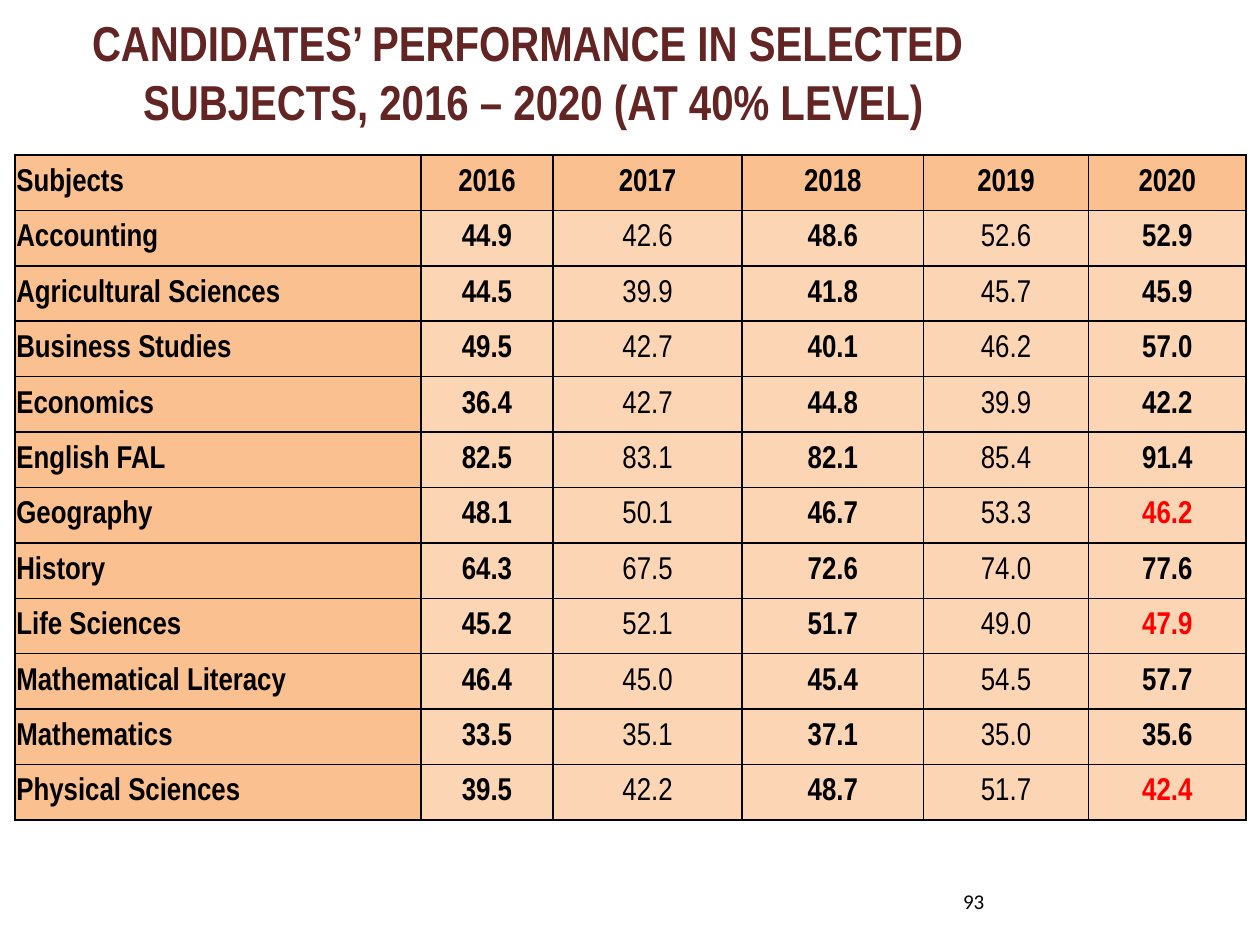
from dataclasses import dataclass

from lxml import etree
from pptx import Presentation
from pptx import util as u
from pptx.dml.color import RGBColor
from pptx.enum import text
from pptx.oxml import ns


@dataclass(frozen=True)
class Theme:
    title: str = "632523"
    body: str = "000000"
    decline: str = "FF0000"
    label_fill: str = "FAC090"
    value_fill: str = "FCD5B5"
    border: str = "000000"
    heading_font: str = "Arial Narrow"
    number_font: str = "Calibri"
    title_size: int = 28
    table_size: int = 18
    number_size: int = 12


THEME = Theme()
CENTER, LEFT, RIGHT = (text.PP_ALIGN.CENTER, text.PP_ALIGN.LEFT,
                       text.PP_ALIGN.RIGHT)

TITLE = ("CANDIDATES’ PERFORMANCE IN SELECTED ",
         "SUBJECTS, 2016 – 2020 (AT 40% LEVEL)")
YEARS = range(2016, 2021)
PASS_RATES = {
    "Accounting": (44.9, 42.6, 48.6, 52.6, 52.9),
    "Agricultural Sciences": (44.5, 39.9, 41.8, 45.7, 45.9),
    "Business Studies": (49.5, 42.7, 40.1, 46.2, 57.0),
    "Economics": (36.4, 42.7, 44.8, 39.9, 42.2),
    "English FAL": (82.5, 83.1, 82.1, 85.4, 91.4),
    "Geography": (48.1, 50.1, 46.7, 53.3, 46.2),
    "History": (64.3, 67.5, 72.6, 74.0, 77.6),
    "Life Sciences": (45.2, 52.1, 51.7, 49.0, 47.9),
    "Mathematical Literacy": (46.4, 45.0, 45.4, 54.5, 57.7),
    "Mathematics": (33.5, 35.1, 37.1, 35.0, 35.6),
    "Physical Sciences": (39.5, 42.2, 48.7, 51.7, 42.4),
}
COLUMN_WIDTHS = (3.22, 1.05, 1.5, 1.44, 1.31, 1.25)


def write(p, *lines, size, font=THEME.heading_font, color=THEME.body,
          bold=False, align=LEFT):
    """Fill a paragraph with lines that share one format."""
    p.alignment = align
    for i, line in enumerate(lines):
        if i:
            p.add_line_break()
        r = p.add_run()
        r.text = line
        r.font.size = u.Pt(size)
        r.font.name = font
        r.font.bold = bold
        r.font.color.rgb = RGBColor.from_string(color)


def add_text(s, box, *lines, **fmt):
    tf = s.shapes.add_textbox(*map(u.Inches, box)).text_frame
    tf.word_wrap = True
    tf.vertical_anchor = text.MSO_ANCHOR.MIDDLE
    write(tf.paragraphs[0], *lines, **fmt)


def add_title(s, box):
    add_text(s, box, *TITLE, size=THEME.title_size, color=THEME.title,
             bold=True, align=CENTER)


def add_page_number(s, box, number):
    add_text(s, box, str(number), size=THEME.number_size,
             font=THEME.number_font, align=RIGHT)


def style_cell(cell, fill):
    """Set insets, border and fill; borders must precede the fill in XML."""
    cell.margin_left = cell.margin_right = cell.margin_top = u.Inches(0.01)
    cell.margin_bottom = 0
    cell.vertical_anchor = text.MSO_ANCHOR.MIDDLE
    tc_pr = cell._tc.get_or_add_tcPr()
    for side in ("lnL", "lnR", "lnT", "lnB"):
        ln = etree.SubElement(tc_pr, ns.qn(f"a:{side}"), w=str(u.Pt(1)))
        solid = etree.SubElement(ln, ns.qn("a:solidFill"))
        etree.SubElement(solid, ns.qn("a:srgbClr"), val=THEME.border)
    cell.fill.solid()
    cell.fill.fore_color.rgb = RGBColor.from_string(fill)


def add_results_table(s, box):
    """Alternate years are bold; a fall in the last year is red."""
    rows = [("Subjects", *map(str, YEARS))]
    rows += [(name, *(f"{rate:.1f}" for rate in rates))
             for name, rates in PASS_RATES.items()]
    table = s.shapes.add_table(len(rows), len(COLUMN_WIDTHS),
                               *map(u.Inches, box)).table
    table.horz_banding = False
    for column, width in zip(table.columns, COLUMN_WIDTHS):
        column.width = u.Inches(width)

    last = len(COLUMN_WIDTHS) - 1
    for i, row in enumerate(rows):
        table.rows[i].height = u.Inches(box[3] / len(rows))
        for j, value in enumerate(row):
            label = i == 0 or j == 0
            fell = (not label and j == last
                    and float(value) < float(row[j - 1]))
            cell = table.cell(i, j)
            style_cell(cell, THEME.label_fill if label else THEME.value_fill)
            write(cell.text_frame.paragraphs[0], value,
                  size=THEME.table_size, bold=label or j % 2 == 1,
                  color=THEME.decline if fell else THEME.body,
                  align=CENTER if j else LEFT)


def main():
    prs = Presentation()
    prs.slide_width, prs.slide_height = u.Inches(10), u.Inches(7.5)
    s = prs.slides.add_slide(prs.slide_layouts[6])
    add_title(s, (0.57, 0.13, 7.32, 0.87))
    add_results_table(s, (0.12, 1.23, 9.76, 5.28))
    add_page_number(s, (7.36, 6.9, 0.55, 0.51), 93)
    prs.save("out.pptx")


if __name__ == "__main__":
    main()
